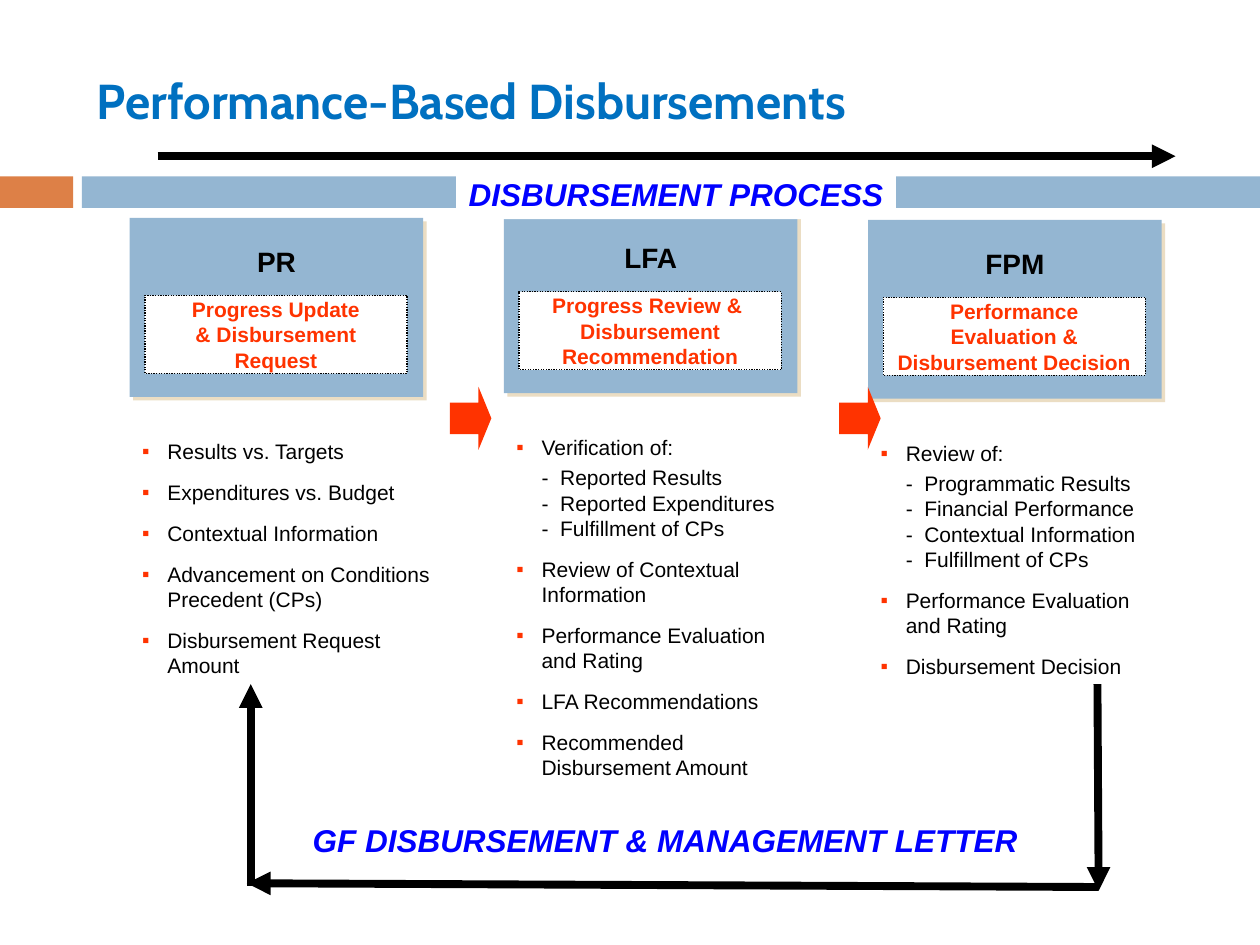
from dataclasses import dataclass
from lxml.etree import SubElement
from pptx import Presentation
from pptx.dml.color import RGBColor
from pptx.enum.dml import MSO_LINE_DASH_STYLE as Dash
from pptx.enum.shapes import MSO_CONNECTOR as Connector, MSO_SHAPE as Shape
from pptx.enum.text import MSO_ANCHOR as Anchor, PP_ALIGN as Align
from pptx.oxml.ns import qn
from pptx.util import Inches, Pt


@dataclass(frozen=True)
class Theme:
    black: str = "000000"
    white: str = "FFFFFF"
    blue: str = "94B6D2"
    orange: str = "DD8047"
    red: str = "FF3300"
    title: str = "0070C0"
    caption: str = "0000FF"
    shadow: str = "EBDDC3"
    title_font: str = "Cabin"
    body_font: str = "Arial"
    title_size: int = 28
    caption_size: int = 18
    heading_size: int = 16
    body_size: int = 12


COLUMNS, ROWS = 100, 75
CARDS = [
    (10.3, 17.3, 25.6, 19.2, "PR", "Progress Update\v& Disbursement Request", [
        "Results vs. Targets",
        "Expenditures vs. Budget",
        "Contextual Information",
        "Advancement on Conditions Precedent (CPs)",
        "Disbursement Request Amount",
    ]),
    (40, 17, 24.2, 31.7, "LFA", "Progress Review & \vDisbursement Recommendation", [
        ("Verification of:", ["Reported Results", "Reported Expenditures", "Fulfillment of CPs"]),
        "Review of Contextual Information",
        "Performance Evaluation and Rating",
        "LFA Recommendations",
        "Recommended Disbursement Amount",
    ]),
    (68.9, 17.45, 24.2, 31.7, "FPM", "Performance Evaluation & Disbursement Decision", [
        ("Review of:", ["Programmatic Results", "Financial Performance",
                        "Contextual Information", "Fulfillment of CPs"]),
        "Performance Evaluation and Rating",
        "Disbursement Decision",
    ]),
]


class SlideBuilder:
    def __init__(self, presentation, theme):
        self.theme = theme
        self.column = presentation.slide_width / COLUMNS
        self.row = presentation.slide_height / ROWS
        self.slide = presentation.slides.add_slide(presentation.slide_layouts[6])

    def place(self, *lengths):
        units = (self.column, self.row) * 2
        return [round(length * unit) for length, unit in zip(lengths, units)]

    def block(self, area, color, kind=Shape.RECTANGLE):
        shape = self.slide.shapes.add_shape(kind, *self.place(*area))
        shape.shadow.inherit = False
        shape.fill.solid()
        shape.fill.fore_color.rgb = RGBColor.from_string(color)
        shape.line.fill.background()
        return shape

    def cast_shadow(self, shape):
        effects = shape._element.spPr.find(qn("a:effectLst"))
        shadow = SubElement(effects, qn("a:outerShdw"), dist=str(Pt(2.8)),
                            dir="2700000", algn="ctr", rotWithShape="0")
        SubElement(shadow, qn("a:srgbClr"), val=self.theme.shadow)

    def style(self, paragraph, size, color, bold=False, italic=False, font=None):
        paragraph.font.name = font or self.theme.body_font
        paragraph.font.size = Pt(size)
        paragraph.font.bold = bold
        paragraph.font.italic = italic
        paragraph.font.color.rgb = RGBColor.from_string(color)

    def label(self, shape, text, size, color, align=Align.CENTER, wrap=True, **look):
        frame = shape.text_frame
        frame.word_wrap = wrap
        frame.vertical_anchor = Anchor.MIDDLE
        paragraph = frame.paragraphs[0]
        paragraph.text = text
        paragraph.alignment = align
        self.style(paragraph, size, color, bold=True, **look)

    def text_box(self, area):
        return self.slide.shapes.add_textbox(*self.place(*area))

    def title(self, area, text):
        self.label(self.text_box(area), text, self.theme.title_size, self.theme.title,
                   align=Align.LEFT, font=self.theme.title_font)

    def caption(self, area, text):
        self.label(self.block(area, self.theme.white), text, self.theme.caption_size,
                   self.theme.caption, wrap=False, italic=True)

    def list_paragraph(self, frame, text, bulleted=True, after=6):
        first = frame.paragraphs[0]
        paragraph = frame.add_paragraph() if first.runs else first
        paragraph.text = text
        paragraph.space_before = Pt(3)
        paragraph.space_after = Pt(after)
        self.style(paragraph, self.theme.body_size, self.theme.black)
        properties = paragraph._p.get_or_add_pPr()
        properties.set("marL", str(Inches(0.2)))
        properties.set("indent", str(Inches(-0.2) if bulleted else 0))
        if bulleted:
            color = SubElement(properties, qn("a:buClr"))
            SubElement(color, qn("a:srgbClr"), val=self.theme.red)
            SubElement(properties, qn("a:buFont"), typeface=self.theme.body_font)
            SubElement(properties, qn("a:buChar"), char="▪")
            properties.append(properties.find(qn("a:defRPr")))

    def bullets(self, area, items):
        frame = self.text_box(area).text_frame
        frame.word_wrap = True
        for item in items:
            if isinstance(item, str):
                self.list_paragraph(frame, item)
            else:
                lead, details = item
                self.list_paragraph(frame, lead, after=0)
                lines = "\v".join(f"-  {detail}" for detail in details)
                self.list_paragraph(frame, lines, bulleted=False)

    def card(self, left, top, list_width, list_height, heading, task, items):
        theme = self.theme
        self.cast_shadow(self.block((left, top, 23.3, 14.2), theme.blue))
        task_box = self.block((left + 1.2, top + 6.15, 20.8, 6.2), theme.white)
        task_box.line.color.rgb = RGBColor.from_string(theme.black)
        task_box.line.width = Pt(0.75)
        task_box.line.dash_style = Dash.ROUND_DOT
        self.label(task_box, task, theme.body_size, theme.red)
        self.label(self.text_box((left + 5.8, top + 1.7, 11.7, 3.5)), heading,
                   theme.heading_size, theme.black)
        self.bullets((left, top + 17, list_width, list_height), items)

    def step_arrow(self, left):
        arrow = self.block((left, 30.7, 3.3, 5), self.theme.red, Shape.RIGHT_ARROW)
        arrow.adjustments[1] = 0.31

    def arrow(self, start, end):
        points = self.place(*start, *end)
        connector = self.slide.shapes.add_connector(Connector.STRAIGHT, *points)
        connector.line.width = Pt(4.5)
        connector.line.color.rgb = RGBColor.from_string(self.theme.black)
        SubElement(connector.line._get_or_add_ln(), qn("a:tailEnd"), type="triangle")
        SubElement(connector._element.spPr, qn("a:effectLst"))


def main():
    presentation = Presentation()
    presentation.slide_width = Inches(10)
    presentation.slide_height = Inches(7.5)
    theme = Theme()
    builder = SlideBuilder(presentation, theme)
    builder.block((0, 14, 5.8, 2.5), theme.orange)
    builder.block((6.5, 14, 93.5, 2.5), theme.blue)
    builder.title((6.7, 2.5, 89.2, 10.8), "Performance-Based Disbursements")
    for card in CARDS:
        builder.card(*card)
    for left in (35.7, 66.6):
        builder.step_arrow(left)
    builder.arrow((12.5, 12.4), (93.3, 12.4))
    builder.caption((36.2, 13.4, 34.9, 4), "DISBURSEMENT PROCESS")
    builder.caption((23.8, 64.7, 58.7, 4), "GF DISBURSEMENT & MANAGEMENT LETTER ")
    builder.arrow((87.2, 70.4), (19.6, 70.1))
    builder.arrow((87.1, 54.3), (87.2, 70.7))
    builder.arrow((19.9, 70.3), (19.9, 54.3))
    presentation.save("out.pptx")


if __name__ == "__main__":
    main()
